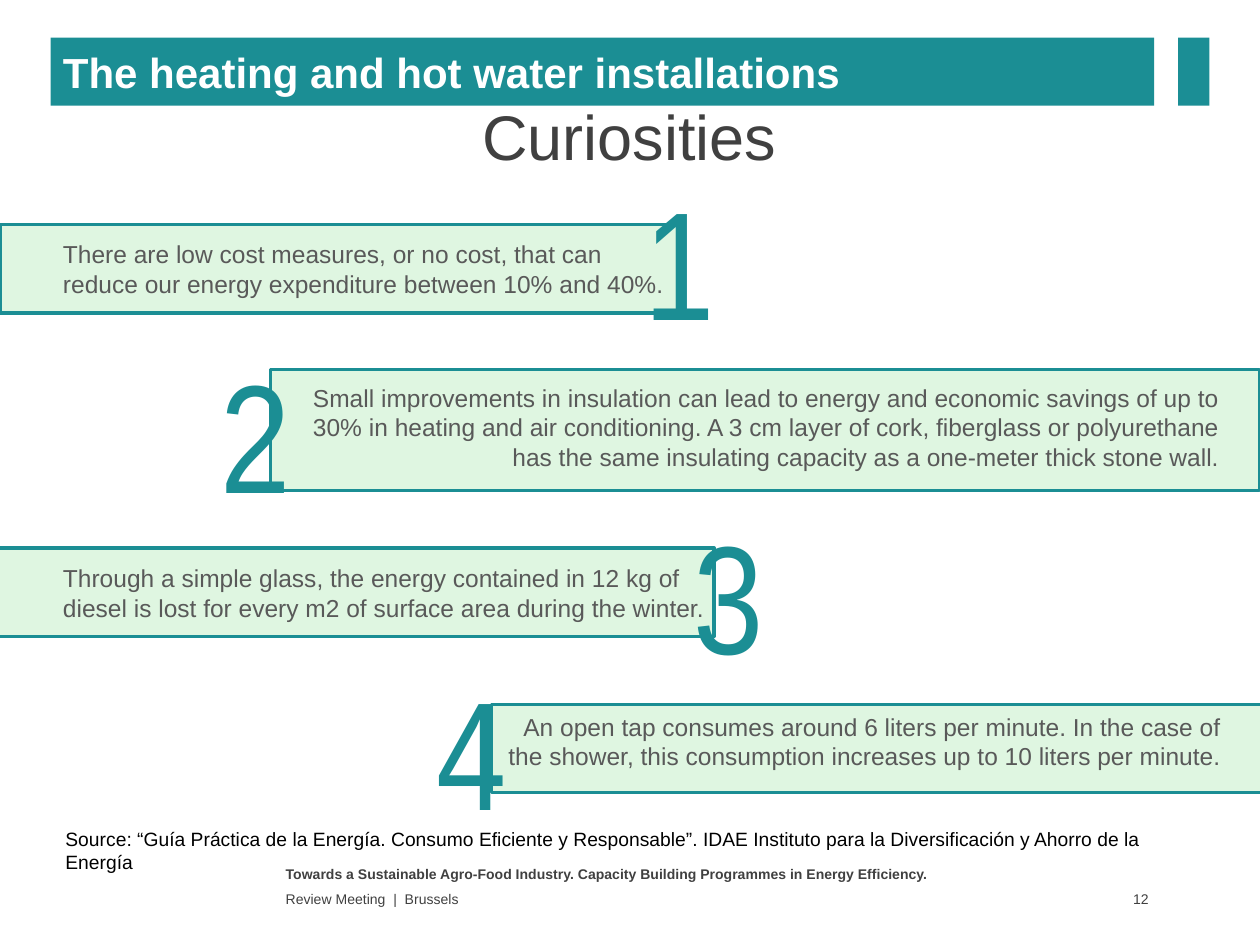
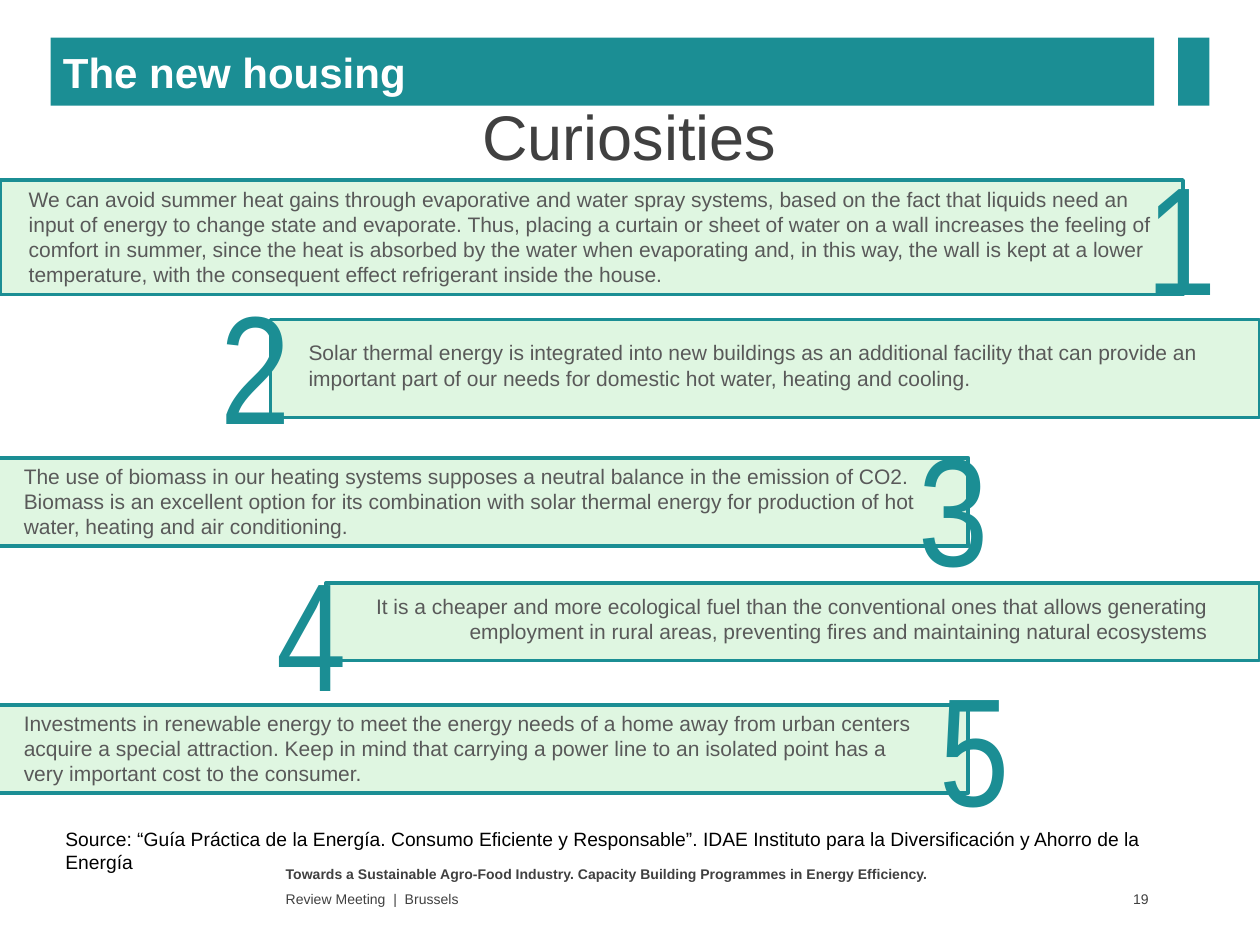
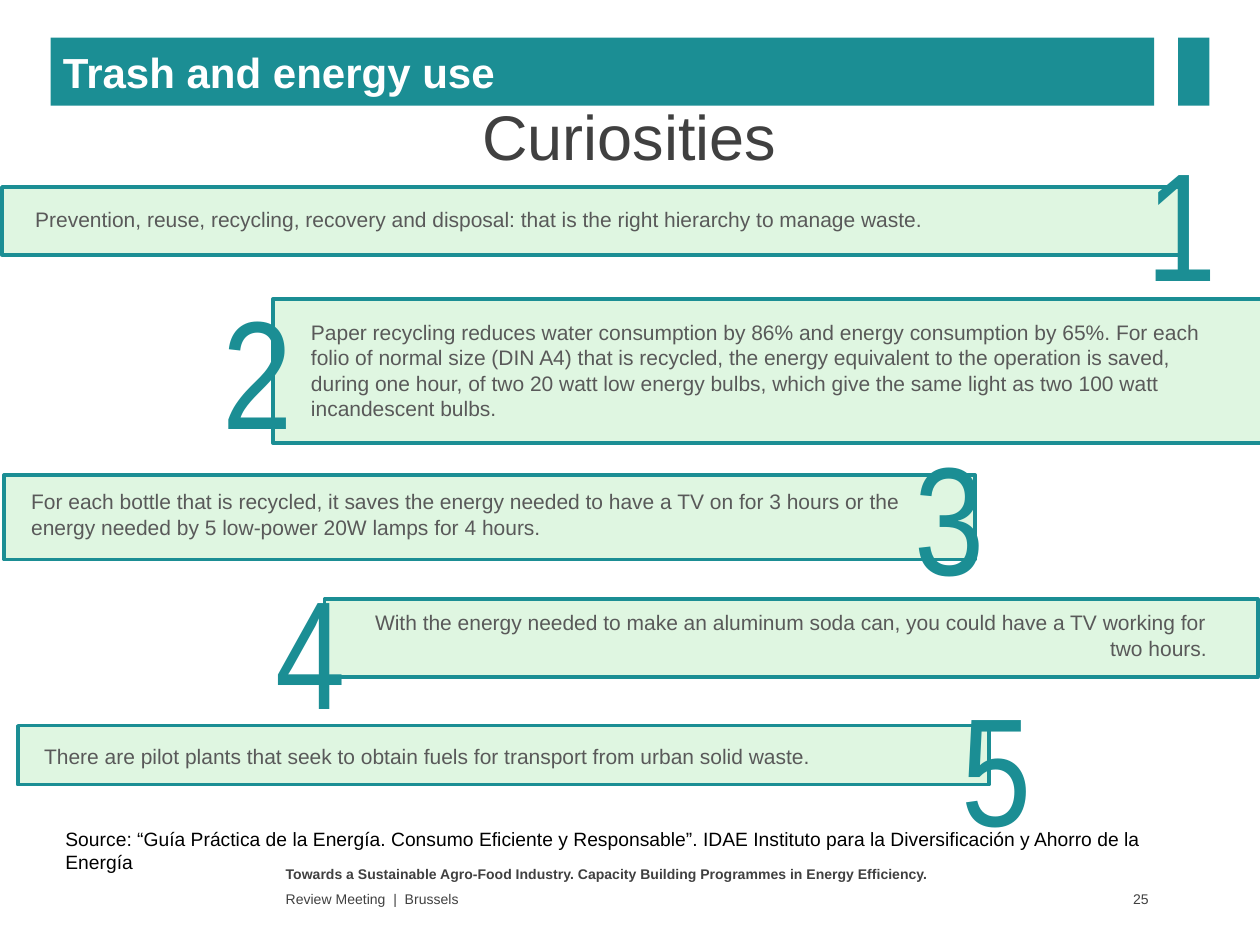
"""Build three slides of numbered energy curiosities."""
from dataclasses import dataclass

from lxml import etree
from pptx import Presentation
from pptx.dml.color import RGBColor
from pptx.enum.shapes import MSO_SHAPE
from pptx.enum.text import MSO_ANCHOR, MSO_AUTO_SIZE, PP_ALIGN
from pptx.oxml.ns import qn
from pptx.util import Cm, Pt

RECT = MSO_SHAPE.RECTANGLE
LEFT, MID, RIGHT = PP_ALIGN.LEFT, PP_ALIGN.CENTER, PP_ALIGN.RIGHT
TOP, CENTER = MSO_ANCHOR.TOP, MSO_ANCHOR.MIDDLE
GROW, FIXED = MSO_AUTO_SIZE.SHAPE_TO_FIT_TEXT, MSO_AUTO_SIZE.NONE


@dataclass(frozen=True)
class Theme:
    teal: str = "1B8E94"
    edge: str = "1B8E95"
    green: str = "86DE8D"
    alpha: str = "26000"
    white: str = "FFFFFF"
    black: str = "000000"
    dark: str = "404040"
    gray: str = "595959"
    face: str = "Arial"
    thin: str = "Arial Narrow"
    title: int = 24
    head: int = 36
    digit: int = 88
    source: int = 11
    foot: int = 8


THEME = Theme()
HEAD = "Curiosities"
SOURCE = ("Source: “Guía Práctica de la Energía. Consumo Eficiente y Responsable”. "
          "IDAE Instituto para la Diversificación y Ahorro de la Energía")
EVENT = ("Towards a Sustainable Agro-Food Industry. "
         "Capacity Building Programmes in Energy Efficiency.")
PLACE = "Review Meeting  |  Brussels"
DIGIT = (3.1, 4.01)

# Each fact: text, alignment, band box, text box, digit corner
SLIDES = [
    dict(title="The heating and hot water installations", page="12", size=14, facts=[
        ("There are low cost measures, or no cost, that can reduce our energy "
         "expenditure between 10% and 40%.",
         LEFT, (0.01, 4.53, 13.74, 1.78), (1.02, 4.7, 12.7, 1.45), (12.75, 3.23)),
        ("Small improvements in insulation can lead to energy and economic savings "
         "of up to 30% in heating and air conditioning. A 3 cm layer of cork, "
         "fiberglass or polyurethane has the same insulating capacity as a "
         "one-meter thick stone wall.",
         RIGHT, (5.45, 7.45, 19.94, 2.44), (6.02, 7.59, 18.82, 2.06), (4.19, 6.73)),
        ("Through a simple glass, the energy contained in 12 kg of diesel is lost "
         "for every m2 of surface area during the winter.",
         LEFT, (-0.08, 11.05, 14.48, 1.78), (1.02, 11.23, 13.56, 1.45), (13.74, 9.96)),
        ("An open tap consumes around 6 liters per minute. In the case of the "
         "shower, this consumption increases up to 10 liters per minute.",
         RIGHT, (9.91, 14.2, 15.75, 1.78), (9.91, 14.22, 14.96, 1.45), (8.56, 13.11)),
    ]),
    dict(title="The new housing", page="19", size=12, facts=[
        ("We can avoid summer heat gains through evaporative and water spray "
         "systems, based on the fact that liquids need an input of energy to change "
         "state and evaporate. Thus, placing a curtain or sheet of water on a wall "
         "increases the feeling of comfort in summer, since the heat is absorbed by "
         "the water when evaporating and, in this way, the wall is kept at a lower "
         "temperature, with the consequent effect refrigerant inside the house.",
         LEFT, (0, 3.63, 23.85, 2.31), (0.33, 3.63, 23.44, 2.31), (22.86, 2.72)),
        ("Solar thermal energy is integrated into new buildings as an additional "
         "facility that can provide an important part of our needs for domestic hot "
         "water, heating and cooling.",
         LEFT, (5.45, 6.44, 19.94, 1.98), (5.97, 6.73, 18.82, 1.27), (4.19, 5.33)),
        ("The use of biomass in our heating systems supposes a neutral balance in "
         "the emission of CO2.\n"
         "Biomass is an excellent option for its combination with solar thermal "
         "energy for production of hot water, heating and air conditioning.",
         LEFT, (-0.06, 9.23, 19.58, 1.78), (0.23, 9.22, 18.82, 1.8), (18.26, 8.2)),
        ("It is a cheaper and more ecological fuel than the conventional ones that "
         "allows generating employment in rural areas, preventing fires and "
         "maintaining natural ecosystems",
         RIGHT, (6.57, 11.75, 18.82, 1.57), (7.29, 11.84, 17.32, 1.27), (5.33, 10.72)),
        ("Investments in renewable energy to meet the energy needs of a home away "
         "from urban centers acquire a special attraction. Keep in mind that "
         "carrying a power line to an isolated point has a very important cost to "
         "the consumer.",
         LEFT, (-0.06, 14.21, 19.58, 1.78), (0.23, 14.2, 18.82, 1.8), (18.69, 13.03)),
    ]),
    dict(title="Trash and energy use", page="25", size=12, facts=[
        ("Prevention, reuse, recycling, recovery and disposal: that is the right "
         "hierarchy to manage waste.",
         LEFT, (0.04, 3.77, 23.85, 1.37), (0.46, 4.04, 22.53, 0.76), (22.86, 2.44)),
        ("Paper recycling reduces water consumption by 86% and energy consumption "
         "by 65%. For each folio of normal size (DIN A4) that is recycled, the "
         "energy equivalent to the operation is saved, during one hour, of two 20 "
         "watt low energy bulbs, which give the same light as two 100 watt "
         "incandescent bulbs.",
         LEFT, (5.5, 6.03, 19.94, 2.9), (6.02, 6.32, 18.82, 2.31), (4.24, 5.44)),
        ("For each bottle that is recycled, it saves the energy needed to have a TV "
         "on for 3 hours or the energy needed by 5 low-power 20W lamps for 4 hours.",
         LEFT, (0.08, 9.58, 19.58, 1.7), (0.38, 9.73, 18.82, 1.27), (18.19, 8.38)),
        ("With the energy needed to make an aluminum soda can, you could have a TV "
         "working for two hours.",
         RIGHT, (6.54, 12.08, 18.82, 1.57), (7.26, 12.17, 17.32, 1.27), (5.31, 11.07)),
        ("There are pilot plants that seek to obtain fuels for transport from urban "
         "solid waste.",
         LEFT, (0.36, 14.63, 19.58, 1.19), (0.64, 14.86, 18.82, 0.76), (19.13, 13.44)),
    ]),
]


def paint(hue):
    return RGBColor.from_string(hue)


def write(shape, text, size, hue, align=LEFT, anchor=TOP, bold=False,
          face=THEME.face, fit=FIXED):
    frame = shape.text_frame
    frame.word_wrap = True
    frame.auto_size = fit
    frame.vertical_anchor = anchor
    for i, line in enumerate(text.split("\n")):
        para = frame.add_paragraph() if i else frame.paragraphs[0]
        para.alignment = align
        run = para.add_run()
        run.text = line
        font = run.font
        font.name, font.size, font.bold = face, Pt(size), bold
        font.color.rgb = paint(hue)
    return frame


def add_text(slide, box, *words, **style):
    return write(slide.shapes.add_textbox(*map(Cm, box)), *words, **style)


def add_rect(slide, box, hue):
    rect = slide.shapes.add_shape(RECT, *map(Cm, box))
    rect.shadow.inherit = False
    rect.fill.solid()
    rect.fill.fore_color.rgb = paint(hue)
    rect.line.fill.background()
    return rect


def add_band(slide, box):
    band = add_rect(slide, box, THEME.green)
    tint = band.fill._xPr.find(qn("a:solidFill"))[0]
    etree.SubElement(tint, qn("a:alpha"), val=THEME.alpha)
    band.line.color.rgb = paint(THEME.teal)
    band.line.width = Pt(2)


def add_digit(slide, spot, text):
    frame = add_text(slide, spot + DIGIT, text, THEME.digit, THEME.teal,
                     face=THEME.thin, fit=GROW)
    props = frame.paragraphs[0].runs[0].font._element
    line = etree.Element(qn("a:ln"), w=str(Pt(0.75)))
    fill = etree.SubElement(line, qn("a:solidFill"))
    etree.SubElement(fill, qn("a:srgbClr"), val=THEME.white)
    props.insert(0, line)


def add_frame(slide, title, page):
    bar = add_rect(slide, (1.02, 0.76, 22.25, 1.37), THEME.teal)
    write(bar, title, THEME.title, THEME.white, anchor=CENTER, bold=True)
    add_rect(slide, (23.75, 0.76, 0.63, 1.37), THEME.edge)
    add_text(slide, (1.02, 2.34, 23.34, 0.79), HEAD, THEME.head, THEME.dark,
             align=MID, anchor=CENTER)
    add_text(slide, (1.07, 16.56, 23.34, 1.19), SOURCE, THEME.source, THEME.black,
             fit=GROW)
    add_text(slide, (5.51, 17.32, 13.97, 0.53), EVENT, THEME.foot, THEME.dark,
             bold=True)
    add_text(slide, (5.51, 17.88, 13.97, 0.48), PLACE, THEME.foot, THEME.dark,
             anchor=CENTER)
    frame = add_text(slide, (21.84, 17.86, 1.42, 0.51), page, THEME.foot, THEME.dark,
                     align=RIGHT, anchor=CENTER)
    frame.margin_right = Cm(0.1)


def main():
    deck = Presentation()
    deck.slide_width, deck.slide_height = Cm(25.4), Cm(19.05)
    for data in SLIDES:
        slide = deck.slides.add_slide(deck.slide_layouts[6])
        add_frame(slide, data["title"], data["page"])
        for i, (text, align, band, box, spot) in enumerate(data["facts"], 1):
            add_band(slide, band)
            add_text(slide, box, text, data["size"], THEME.gray, align=align, fit=GROW)
            add_digit(slide, spot, str(i))
    deck.save("out.pptx")


if __name__ == "__main__":
    main()
